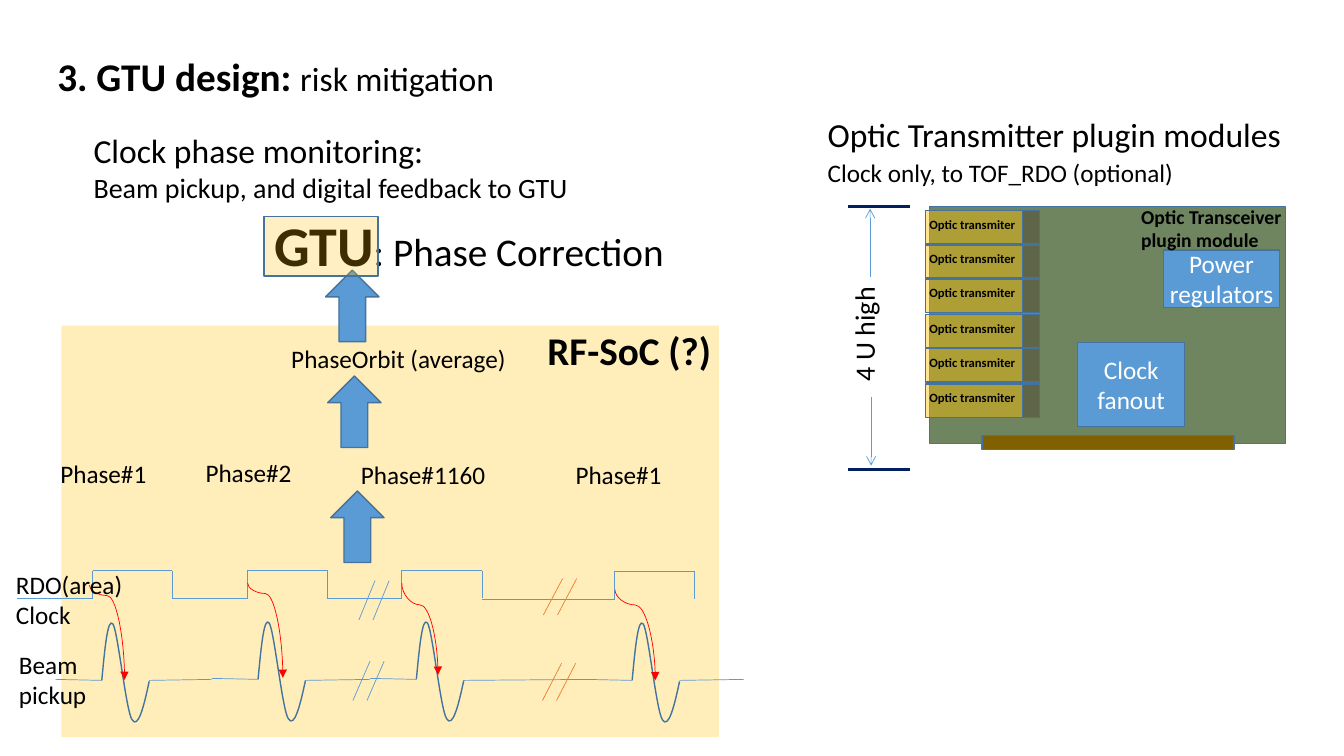
from lxml.etree import SubElement
from pptx import Presentation
from pptx.dml.color import RGBColor
from pptx.enum.shapes import MSO_CONNECTOR, MSO_SHAPE
from pptx.enum.text import MSO_ANCHOR, MSO_AUTO_SIZE, PP_ALIGN
from pptx.oxml.ns import qn
from pptx.util import Pt

PX = 9144
COLORS = {
    "black": "000000", "white": "FFFFFF", "blue": "5B9BD5", "outline": "43739E",
    "gold": "FFC000", "navy": "002060", "orange": "ED7D31", "red": "FF0000",
    "board": "385723", "edge": "806000",
}

presentation = Presentation()
presentation.slide_width = 1333 * PX
presentation.slide_height = 750 * PX
slide = presentation.slides.add_slide(presentation.slide_layouts[6])
shapes = slide.shapes


def add_box(kind, box, fill, opacity=100, outlined=True):
    shape = shapes.add_shape(kind, *[length * PX for length in box])
    shape.shadow.inherit = False
    shape.fill.solid()
    shape.fill.fore_color.rgb = RGBColor.from_string(COLORS[fill])
    if opacity < 100:
        color = shape.fill._xPr.find(".//" + qn("a:srgbClr"))
        SubElement(color, qn("a:alpha"), val=str(opacity * 1000))
    if outlined:
        shape.line.color.rgb = RGBColor.from_string(COLORS["outline"])
        shape.line.width = Pt(1)
    else:
        shape.line.fill.background()
    return shape


def write_text(frame, paragraphs, color="black", align=PP_ALIGN.LEFT):
    for index, runs in enumerate(paragraphs):
        paragraph = frame.add_paragraph() if index else frame.paragraphs[0]
        paragraph.alignment = align
        for text, size, bold in runs:
            run = paragraph.add_run()
            run.text = text
            run.font.name = "Calibri"
            run.font.size = Pt(size)
            run.font.bold = bold
            run.font.color.rgb = RGBColor.from_string(COLORS[color])


add_box(MSO_SHAPE.RECTANGLE, (61, 323, 652, 408), "gold", 27, False)

lines = []
CREST, TROUGH, WAVE_WIDTH = 57, 41, 47
WAVE_CURVES = [
    [(3, -32), (6, -63), (11, -56)],
    [(16, -49), (24, 30), (30, 39)],
    [(36, 49), (42, 25), (47, 1)],
]
for left, base, next_left in [(101, 675, 210), (256, 674, 367), (413, 674, 585), (627, 675, 738)]:
    builder = shapes.build_freeform(left, base, scale=PX)
    builder.add_line_segments([(left, base - CREST), (left + WAVE_WIDTH, base + TROUGH)], close=False)
    beam_wave = builder.convert_to_shape()
    beam_wave.shadow.inherit = False
    beam_wave.fill.background()
    beam_wave.line.color.rgb = RGBColor.from_string(COLORS["outline"])
    beam_wave.line.width = Pt(1)
    wave_outline = beam_wave._element.spPr.find(".//" + qn("a:path"))
    for segment in wave_outline.findall(qn("a:lnTo")):
        wave_outline.remove(segment)
    for curve in WAVE_CURVES:
        bezier = SubElement(wave_outline, qn("a:cubicBezTo"))
        for x, y in curve:
            SubElement(bezier, qn("a:pt"), x=str(x), y=str(y + CREST))
    lines.append((left, base, left - 46, base - 1, "blue", 0.5, None))
    lines.append((left + WAVE_WIDTH, 675, next_left, 674, "blue", 0.5, None))

for start, rise, fall, top in [(17, 92, 171, 566), (171, 245, 325, 566),
                               (324, 398, 478, 566), (478, 609, 689, 567)]:
    low = top + 28
    for ends in [(start, low, rise, low), (rise, low, rise, top),
                 (rise, top, fall, top), (fall, top, fall, low - 1)]:
        lines.append((*ends, "blue", 0.5, None))

for x, y, run_left, drop, color in [(367, 656, 17, 39, "blue"), (372, 576, 16, 39, "blue"),
                                    (558, 574, 19, 36, "orange"), (557, 658, 19, 37, "orange")]:
    for break_x in (x, x + 14):
        lines.append((break_x, y, break_x - run_left, y + drop, color, 0.5, None))

lines += [
    (841, 466, 903, 466, "navy", 2.25, None),
    (841, 205, 903, 205, "navy", 2.25, None),
    (863, 207, 863, 275, "blue", 0.5, "a:headEnd"),
    (864, 394, 864, 462, "blue", 0.5, "a:tailEnd"),
]
bends = [(59, 610, 94, 35, 11000), (216, 608, 94, 35, 11000),
         (371, 606, 91, 36, 23700), (585, 610, 90, 40, 16900)]
lines += [(x, y, x + width, y + height, "red", 0.5, bend) for x, y, width, height, bend in bends]

for *ends, color, width, ending in lines:
    curved = isinstance(ending, int)
    kind = MSO_CONNECTOR.CURVE if curved else MSO_CONNECTOR.STRAIGHT
    connector = shapes.add_connector(kind, *[length * PX for length in ends])
    connector.line.color.rgb = RGBColor.from_string(COLORS[color])
    connector.line.width = Pt(width)
    properties = connector._element.spPr
    SubElement(properties, qn("a:effectLst"))
    outline = connector.line._get_or_add_ln()
    if curved:
        properties.xfrm.set("rot", "16200000")
        properties.xfrm.set("flipH", "1")
        adjustments = properties.find(".//" + qn("a:avLst"))
        SubElement(adjustments, qn("a:gd"), name="adj1", fmla=f"val {ending}")
        SubElement(outline, qn("a:tailEnd"), type="triangle")
    elif ending:
        SubElement(outline, qn(ending), type="arrow")

for x, y in [(328, 487), (325, 373), (323, 268)]:
    add_box(MSO_SHAPE.UP_ARROW, (x, y, 53, 71), "blue")

add_box(MSO_SHAPE.RECTANGLE, (922, 205, 353, 235), "board", 72)
add_box(MSO_SHAPE.RECTANGLE, (974, 432, 250, 14), "edge")
for box, paragraphs in [
    ((1069, 340, 106, 83), [[("Clock fanout", 18, False)]]),
    ((1154, 248, 115, 57), [[("Power", 18, False)], [("regulators", 18, False)]]),
]:
    frame = add_box(MSO_SHAPE.RECTANGLE, box, "blue").text_frame
    frame.margin_left = frame.margin_right = frame.margin_top = frame.margin_bottom = 0
    frame.word_wrap = True
    frame.vertical_anchor = MSO_ANCHOR.MIDDLE
    write_text(frame, paragraphs, "white", PP_ALIGN.CENTER)

texts = [
    ((83, 124, 533, 84), True, [[("Clock phase monitoring:", 24, False)],
                                [("Beam pickup, and digital feedback to GTU", 20, False)]]),
    ((9, 639, 114, 71), True, [[("Beam pickup", 18, False)]]),
    ((6, 560, 154, 71), True, [[("RDO(area) Clock", 18, False)]]),
    ((50, 450, 106, 40), False, [[("Phase#1", 18, False)]]),
    ((194, 449, 106, 40), False, [[("Phase#2", 18, False)]]),
    ((348, 451, 145, 40), False, [[("Phase#1160", 18, False)]]),
    ((561, 451, 106, 40), False, [[("Phase#1", 18, False)]]),
    ((279, 336, 235, 40), False, [[("PhaseOrbit (average)", 18, False)]]),
    ((262, 204, 411, 77), False, [[("GTU", 40, True), (": Phase Correction", 28, False)]]),
    ((533, 319, 185, 57), False, [[("RF-SoC (?)", 28, True)]]),
    ((1122, 198, 164, 57), True, [[("Optic Transceiver plugin module", 14, True)]]),
    ((835, 284, 54, 104), False, [[("4 U high", 20, False)]]),
    ((811, 108, 475, 84), False, [[("Optic Transmitter plugin modules", 24, False)],
                                  [("Clock only, to TOF_RDO (optional)", 18, False),
                                   (" ", 20, False)]]),
    ((47, 47, 458, 57), False, [[("3. GTU design: ", 28, True), ("risk mitigation", 24, False)]]),
]
for row in range(6):
    top = int(209 + row * 34.4)
    add_box(MSO_SHAPE.RECTANGLE, (918, top, 113, 33), "gold", 43)
    add_box(MSO_SHAPE.RECTANGLE, (1014, top, 17, 33), "navy", 45)
    texts.append(((912, top + 1, 110, 25), False, [[("Optic transmiter", 9, True)]]))

for box, wrap, paragraphs in texts:
    frame = shapes.add_textbox(*[length * PX for length in box]).text_frame
    frame.word_wrap = wrap
    frame.auto_size = MSO_AUTO_SIZE.SHAPE_TO_FIT_TEXT
    write_text(frame, paragraphs)
    if paragraphs[0][0][0] == "4 U high":
        frame._txBody.bodyPr.set("vert", "vert270")

add_box(MSO_SHAPE.RECTANGLE, (262, 215, 113, 59), "gold", 24)

presentation.save("out.pptx")
